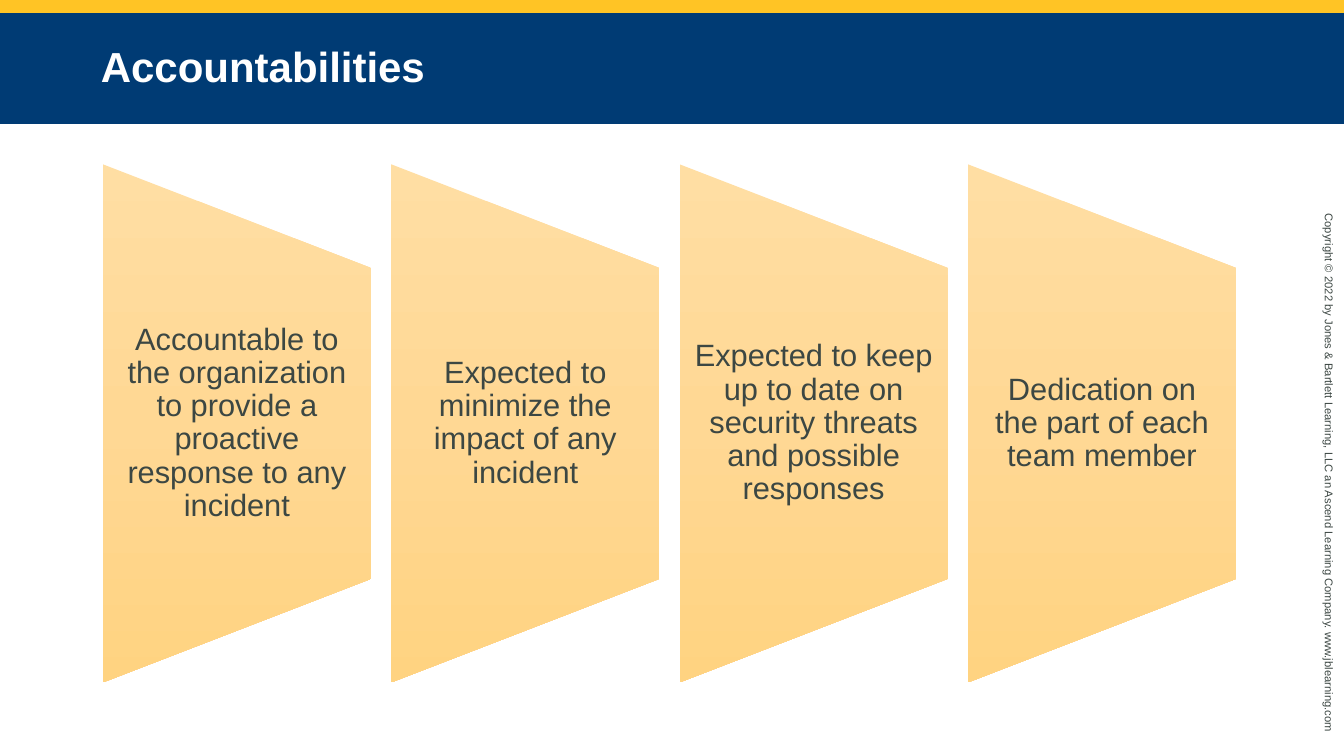
import copy

import pptx
import pptx.dml.color
import pptx.enum.shapes
import pptx.enum.text
import pptx.oxml.ns
import pptx.util

Inches = pptx.util.Inches
RGBColor = pptx.dml.color.RGBColor
SHAPE = pptx.enum.shapes.MSO_SHAPE
ANCHOR = pptx.enum.text.MSO_ANCHOR
ALIGN = pptx.enum.text.PP_ALIGN

TITLE = "Accountabilities"
ACCOUNTABILITIES = [
    "Accountable to the organization to provide a proactive response to any incident",
    "Expected to minimize the impact of any incident",
    "Expected to keep up to date on security threats and possible responses",
    "Dedication on the part of each team member",
]
COPYRIGHT = ("Copyright © 2022 by Jones & Bartlett Learning, LLC an Ascend "
             "Learning Company. www.jblearning.com")

GOLD = RGBColor(0xFF, 0xC4, 0x25)
NAVY = RGBColor(0x00, 0x3B, 0x74)
WHITE = RGBColor(0xFF, 0xFF, 0xFF)
SLATE = RGBColor(0x3C, 0x47, 0x43)
PANEL_GRADIENT = [
    (0, RGBColor(0xFF, 0xDE, 0xA3)),
    (0.5, RGBColor(0xFF, 0xD8, 0x94)),
    (1, RGBColor(0xFF, 0xD3, 0x81)),
]

SLIDE_W, SLIDE_H = 13.33, 7.5
STRIPE_H, BANNER_H = 0.13, 1.1
PANEL_LEFT, PANEL_PITCH, PANEL_W, PANEL_H = 1.02, 2.86, 2.66, 5.14
PANEL_MIDDLE = 4.2
LABEL_H = 3.08


def box(left, top, width, height):
    return [Inches(length) for length in (left, top, width, height)]


def add_plain_shape(slide, preset, bounds):
    """Add a shape without outline or shadow."""
    shape = slide.shapes.add_shape(preset, *bounds)
    shape.shadow.inherit = False
    shape.line.fill.background()
    return shape


def add_band(slide, top, height, color):
    band = add_plain_shape(slide, SHAPE.RECTANGLE, box(0, top, SLIDE_W, height))
    band.fill.solid()
    band.fill.fore_color.rgb = color
    return band


def write(shape, text, size, color, side=0.1, end=0.05, bold=False,
          align=ALIGN.LEFT, anchor=ANCHOR.MIDDLE, spacing=1.0):
    """Put one run in the shape; side and end are the insets in inches."""
    frame = shape.text_frame
    frame.word_wrap = True
    frame.vertical_anchor = anchor
    frame.margin_left = frame.margin_right = Inches(side)
    frame.margin_top = frame.margin_bottom = Inches(end)
    paragraph = frame.paragraphs[0]
    paragraph.alignment = align
    paragraph.line_spacing = spacing
    run = paragraph.add_run()
    run.text = text
    run.font.name = "Arial"
    run.font.size = pptx.util.Pt(size)
    run.font.bold = bold
    run.font.color.rgb = color


def fill_panel(panel):
    """Shade the panel from top to bottom, whatever its rotation."""
    panel.fill.gradient()
    panel.fill.gradient_angle = 270
    gradient = panel._element.spPr.find(pptx.oxml.ns.qn("a:gradFill"))
    gradient.set("rotWithShape", "0")
    stop_list = gradient.find(pptx.oxml.ns.qn("a:gsLst"))
    stop_list.insert(1, copy.deepcopy(stop_list[0]))
    for stop, (position, color) in zip(panel.fill.gradient_stops, PANEL_GRADIENT):
        stop.position = position
        stop.color.rgb = color


def add_panel(slide, left, text):
    # The preset is laid out wide, then turned on its side about its centre.
    center = left + PANEL_W / 2
    panel = add_plain_shape(
        slide, SHAPE.FLOWCHART_MANUAL_OPERATION,
        box(center - PANEL_H / 2, PANEL_MIDDLE - PANEL_W / 2, PANEL_H, PANEL_W))
    panel.rotation = 270
    fill_panel(panel)
    label = slide.shapes.add_textbox(
        *box(left, PANEL_MIDDLE - LABEL_H / 2, PANEL_W, LABEL_H))
    write(label, text, 22, SLATE, side=0.15, end=0, align=ALIGN.CENTER, spacing=0.9)


def main():
    deck = pptx.Presentation()
    deck.slide_width, deck.slide_height = Inches(SLIDE_W), Inches(SLIDE_H)
    slide = deck.slides.add_slide(deck.slide_layouts[6])

    add_band(slide, 0, STRIPE_H, GOLD)
    copyright_line = slide.shapes.add_textbox(*box(10.44, 4.64, 5.48, 0.24))
    copyright_line.rotation = 90
    write(copyright_line, COPYRIGHT, 8, SLATE, anchor=ANCHOR.TOP)

    banner = add_band(slide, STRIPE_H, BANNER_H, NAVY)
    write(banner, TITLE, 30, WHITE, side=1, bold=True, spacing=0.95)

    for index, text in enumerate(ACCOUNTABILITIES):
        add_panel(slide, PANEL_LEFT + index * PANEL_PITCH, text)

    deck.save("out.pptx")


if __name__ == "__main__":
    main()
